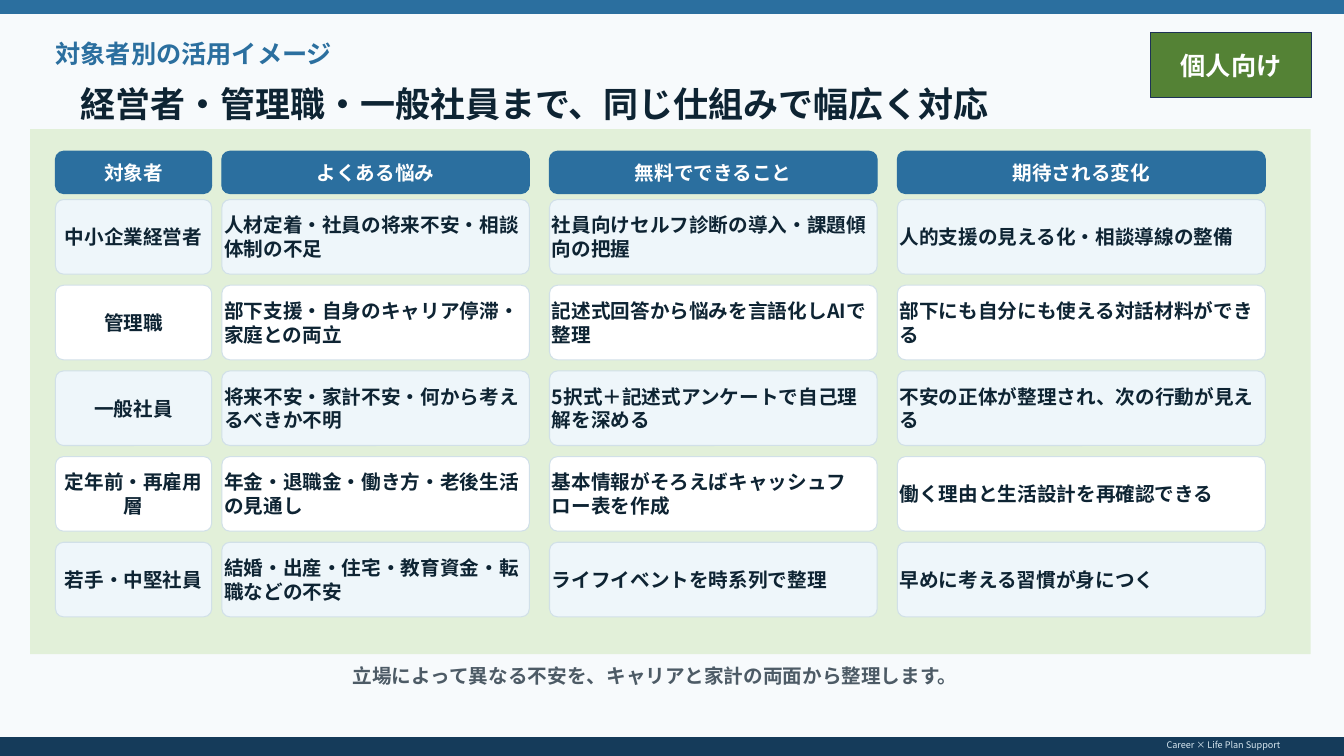
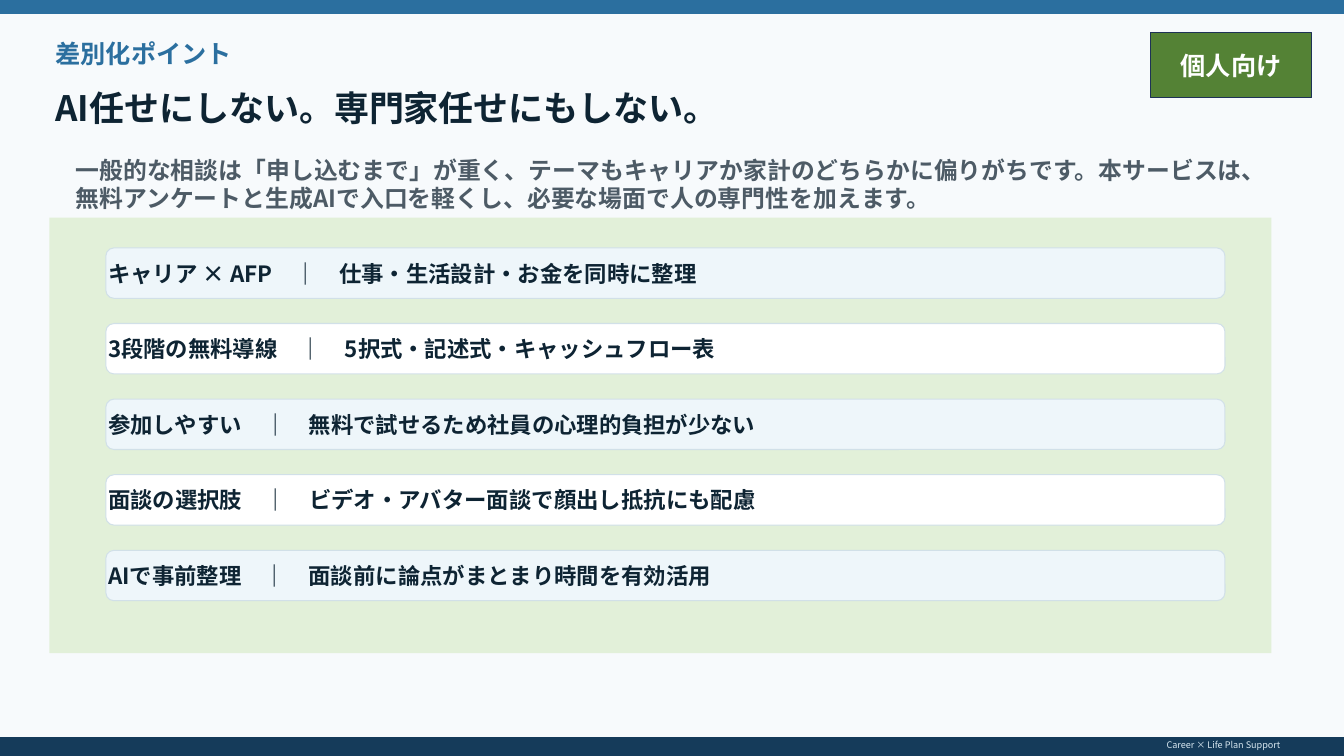
from dataclasses import dataclass
from typing import Optional

import lxml.etree
import pptx
import pptx.dml.color
import pptx.enum.shapes
import pptx.enum.text
import pptx.oxml.ns
import pptx.presentation
import pptx.shapes.autoshape
import pptx.slide
import pptx.util

Inches = pptx.util.Inches
RGBColor = pptx.dml.color.RGBColor
Shape = pptx.enum.shapes.MSO_SHAPE
Align = pptx.enum.text.PP_ALIGN
Slide = pptx.slide.Slide

PAPER = RGBColor(0xF7, 0xFA, 0xFC)
BLUE = RGBColor(0x2B, 0x6F, 0x9F)
NAVY = RGBColor(0x15, 0x3B, 0x5A)
INK = RGBColor(0x0E, 0x24, 0x33)
GRAY = RGBColor(0x4D, 0x5B, 0x66)
PALE_BLUE = RGBColor(0xD7, 0xE7, 0xF0)
PALE_GREEN = RGBColor(0xE2, 0xF0, 0xD9)
GREEN = RGBColor(0x54, 0x82, 0x35)
BADGE_EDGE = RGBColor(0x1E, 0x32, 0x56)
TINT = RGBColor(0xEE, 0xF6, 0xFA)
CARD_EDGE = RGBColor(0xD1, 0xE0, 0xE8)
WHITE = RGBColor(0xFF, 0xFF, 0xFF)

FONT = "Noto Sans CJK JP"
WIDTH, HEIGHT = 13.33, 7.5
CORNER = 0.08


@dataclass(frozen=True)
class Area:
    left: float
    top: float
    width: float
    height: float

    def lengths(self) -> tuple:
        return tuple(Inches(n) for n in (self.left, self.top, self.width, self.height))


@dataclass(frozen=True)
class TextStyle:
    size: float
    color: RGBColor
    bold: bool = True
    align: Align = Align.LEFT


@dataclass(frozen=True)
class Column:
    heading: str
    left: float
    width: float
    align: Align = Align.LEFT


@dataclass(frozen=True)
class Point:
    heading: str
    detail: str


KICKER = TextStyle(18, BLUE)
TITLE = TextStyle(25, INK)
FOOTER = TextStyle(6.5, PALE_BLUE, False, Align.RIGHT)
BADGE = TextStyle(18, WHITE, align=Align.CENTER)
COLUMN_HEAD = TextStyle(14, WHITE, align=Align.CENTER)
LEAD = TextStyle(17, GRAY)
CLOSING = TextStyle(14, GRAY, align=Align.CENTER)
POINT = TextStyle(16, INK)

COLUMNS = (
    Column("対象者", 0.55, 1.55, Align.CENTER),
    Column("よくある悩み", 2.2, 3.05),
    Column("無料でできること", 5.45, 3.25),
    Column("期待される変化", 8.9, 3.65),
)
AUDIENCES = (
    ("中小企業経営者", "人材定着・社員の将来不安・相談体制の不足",
     "社員向けセルフ診断の導入・課題傾向の把握", "人的支援の見える化・相談導線の整備"),
    ("管理職", "部下支援・自身のキャリア停滞・家庭との両立",
     "記述式回答から悩みを言語化しAIで整理", "部下にも自分にも使える対話材料ができる"),
    ("一般社員", "将来不安・家計不安・何から考えるべきか不明",
     "5択式＋記述式アンケートで自己理解を深める", "不安の正体が整理され、次の行動が見える"),
    ("定年前・再雇用層", "年金・退職金・働き方・老後生活の見通し",
     "基本情報がそろえばキャッシュフロー表を作成", "働く理由と生活設計を再確認できる"),
    ("若手・中堅社員", "結婚・出産・住宅・教育資金・転職などの不安",
     "ライフイベントを時系列で整理", "早めに考える習慣が身につく"),
)
POINTS = (
    Point("キャリア × AFP", "仕事・生活設計・お金を同時に整理"),
    Point("3段階の無料導線", "5択式・記述式・キャッシュフロー表"),
    Point("参加しやすい", "無料で試せるため社員の心理的負担が少ない"),
    Point("面談の選択肢", "ビデオ・アバター面談で顔出し抵抗にも配慮"),
    Point("AIで事前整理", "面談前に論点がまとまり時間を有効活用"),
)


def write(box: pptx.shapes.autoshape.Shape, text: str, style: TextStyle, inset: bool = False) -> None:
    frame = box.text_frame
    frame.word_wrap = True
    frame.vertical_anchor = pptx.enum.text.MSO_ANCHOR.MIDDLE
    if not inset:
        frame.margin_left = frame.margin_right = frame.margin_top = frame.margin_bottom = 0
    para = frame.paragraphs[0]
    para.alignment = style.align
    span = para.add_run()
    span.text = text
    span.font.name = FONT
    span.font.size = pptx.util.Pt(style.size)
    span.font.bold = style.bold
    span.font.color.rgb = style.color
    properties = span._r.get_or_add_rPr()
    latin = properties.find(pptx.oxml.ns.qn("a:latin"))
    east_asian = lxml.etree.Element(pptx.oxml.ns.qn("a:ea"), typeface=FONT)
    latin.addnext(east_asian)


def add_text(page: Slide, area: Area, text: str, style: TextStyle) -> None:
    write(page.shapes.add_textbox(*area.lengths()), text, style)


def add_block(page: Slide, area: Area, fill: RGBColor, edge: Optional[RGBColor] = None,
              edge_width: float = 1, rounded: bool = False) -> pptx.shapes.autoshape.Shape:
    kind = Shape.ROUNDED_RECTANGLE if rounded else Shape.RECTANGLE
    block = page.shapes.add_shape(kind, *area.lengths())
    block.shadow.inherit = False
    block.fill.solid()
    block.fill.fore_color.rgb = fill
    if edge is None:
        block.line.fill.background()
    else:
        block.line.color.rgb = edge
        block.line.width = pptx.util.Pt(edge_width)
    if rounded:
        block.adjustments[0] = CORNER / area.height
    return block


def add_card(page: Slide, area: Area, text: str, style: TextStyle,
             fill: RGBColor, edge: RGBColor) -> None:
    write(add_block(page, area, fill, edge, 0.75, rounded=True), text, style)


def row_fill(row: int) -> RGBColor:
    return WHITE if row % 2 else TINT


def add_page(deck: pptx.presentation.Presentation, kicker: str, title: str,
             title_area: Area, panel: Area) -> Slide:
    page = deck.slides.add_slide(deck.slide_layouts[6])
    page.background.fill.solid()
    page.background.fill.fore_color.rgb = PAPER
    add_block(page, panel, PALE_GREEN)
    add_block(page, Area(0, 0, WIDTH, 0.13), BLUE, BLUE)
    add_block(page, Area(0, 7.32, WIDTH, 0.18), NAVY, NAVY)
    add_text(page, Area(0.55, 0.35, 5.8, 0.35), kicker, KICKER)
    add_text(page, title_area, title, TITLE)
    add_text(page, Area(9.6, 7.34, 3.1, 0.1), "Career × Life Plan Support", FOOTER)
    badge = add_block(page, Area(11.41, 0.32, 1.6, 0.65), GREEN, BADGE_EDGE)
    write(badge, "個人向け", BADGE, inset=True)
    return page


def add_audience_page(deck: pptx.presentation.Presentation) -> None:
    page = add_page(deck, "対象者別の活用イメージ",
                    "経営者・管理職・一般社員まで、同じ仕組みで幅広く対応",
                    Area(0.8, 0.78, 12, 0.5), Area(0.3, 1.28, 12.7, 5.21))
    for column in COLUMNS:
        add_card(page, Area(column.left, 1.5, column.width, 0.42),
                 column.heading, COLUMN_HEAD, BLUE, BLUE)
    for row, texts in enumerate(AUDIENCES):
        for column, text in zip(COLUMNS, texts):
            add_card(page, Area(column.left, 1.98 + row * 0.85, column.width, 0.74),
                     text, TextStyle(14, INK, align=column.align), row_fill(row), CARD_EDGE)
    add_text(page, Area(0.7, 6.55, 11.6, 0.3),
             "立場によって異なる不安を、キャリアと家計の両面から整理します。", CLOSING)


def add_difference_page(deck: pptx.presentation.Presentation) -> None:
    page = add_page(deck, "差別化ポイント", "AI任せにしない。専門家任せにもしない。",
                    Area(0.55, 0.82, 12, 0.5), Area(0.49, 2.16, 12.12, 4.32))
    add_text(page, Area(0.75, 1.45, 11.9, 0.75),
             "一般的な相談は「申し込むまで」が重く、テーマもキャリアか家計のどちらかに偏りがちです。"
             "本サービスは、無料アンケートと生成AIで入口を軽くし、必要な場面で人の専門性を加えます。",
             LEAD)
    for row, point in enumerate(POINTS):
        add_card(page, Area(1.05, 2.46 + row * 0.75, 11.1, 0.5),
                 f"{point.heading}　｜　{point.detail}", POINT, row_fill(row), CARD_EDGE)


def main() -> None:
    deck = pptx.Presentation()
    deck.slide_width = Inches(WIDTH)
    deck.slide_height = Inches(HEIGHT)
    add_audience_page(deck)
    add_difference_page(deck)
    deck.save("out.pptx")


if __name__ == "__main__":
    main()
